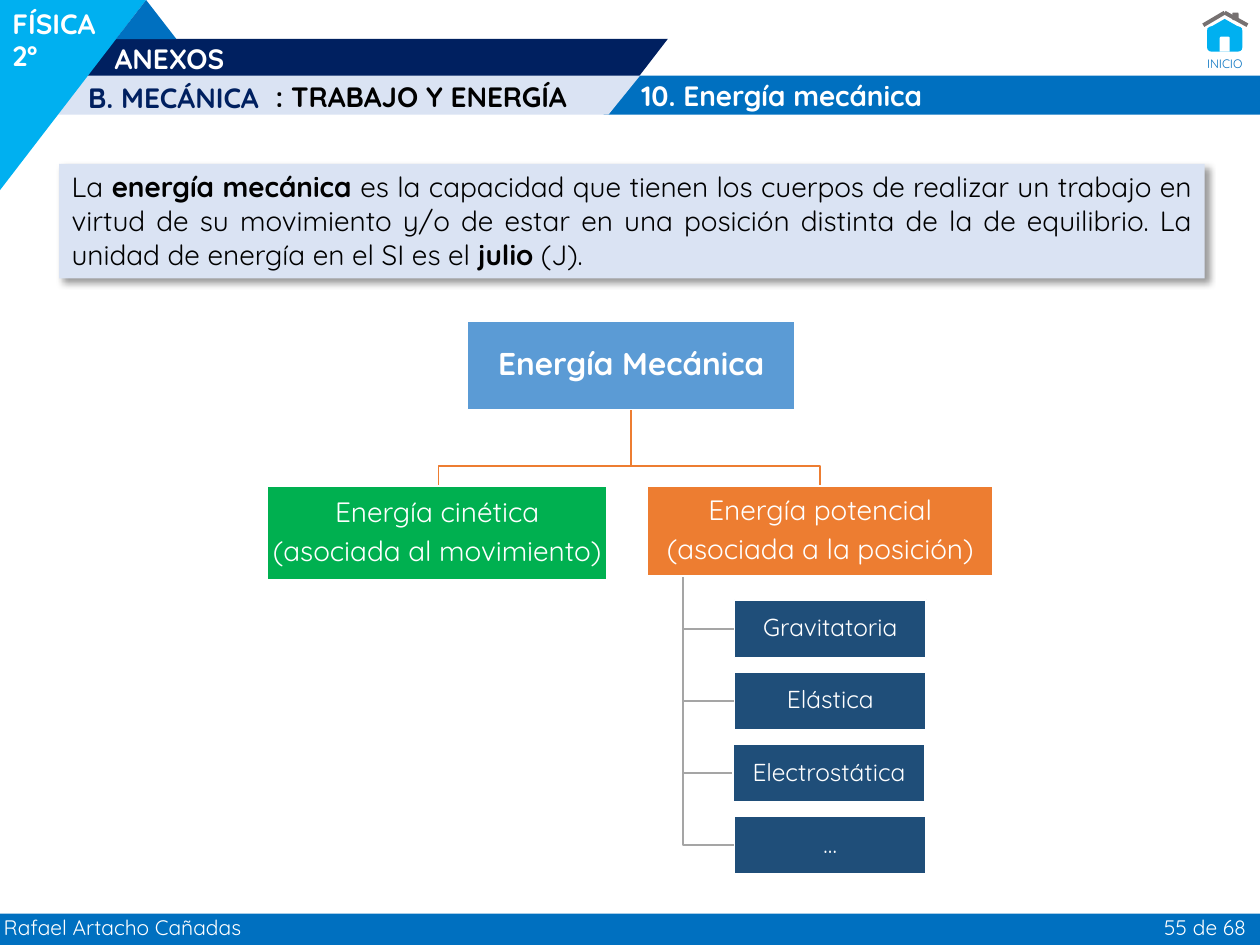
from lxml import etree
from pptx import Presentation
from pptx import util as u
from pptx.dml.color import RGBColor
from pptx.enum import shapes, text
from pptx.oxml.ns import qn

COLORS = {
    "white": "FFFFFF", "black": "000000", "blue": "0070C0", "navy": "002060",
    "pale": "DAE3F3", "cyan": "00B0F0", "gray": "767171", "rule": "A5A5A5",
    "root": "5B9BD5", "green": "00B050", "orange": "ED7D31", "leaf": "1F4E79",
}
COLUMNS, ROWS = 100, 75
KIND = shapes.MSO_SHAPE
ALIGN = text.PP_ALIGN
TIGHT = (0.1, 0.1, 0.1, 0.1)
NONE = (0, 0, 0, 0)
PADDED = (1, 0.5, 1, 0.5)


def color(name):
    return RGBColor.from_string(COLORS[name])


class SlideBuilder:
    """Places elements on a grid of COLUMNS by ROWS."""

    font = "Quicksand"

    def __init__(self, deck):
        self.page = deck.slides.add_slide(deck.slide_layouts[6])
        self.column = deck.slide_width / COLUMNS
        self.row = deck.slide_height / ROWS

    def x(self, columns):
        return u.Emu(round(columns * self.column))

    def y(self, rows):
        return u.Emu(round(rows * self.row))

    def area(self, left, top, width, height):
        return self.x(left), self.y(top), self.x(width), self.y(height)

    def shape(self, kind, area, fill, adjust=None, line=None):
        box = self.page.shapes.add_shape(kind, *self.area(*area))
        box.shadow.inherit = False
        box.fill.solid()
        box.fill.fore_color.rgb = color(fill)
        if line:
            box.line.color.rgb = color(line)
            box.line.width = u.Pt(1)
        else:
            box.line.fill.background()
        if adjust is not None:
            box.adjustments[0] = adjust
        return box

    def set_text(self, box, lines, size, ink="white", bold=False, align=ALIGN.LEFT,
                 insets=NONE, anchor=text.MSO_ANCHOR.TOP, wrap=True):
        frame = box.text_frame
        frame.text = "\n".join(lines)
        frame.word_wrap = wrap
        frame.vertical_anchor = anchor
        frame.margin_left, frame.margin_right = self.x(insets[0]), self.x(insets[2])
        frame.margin_top, frame.margin_bottom = self.y(insets[1]), self.y(insets[3])
        for para in frame.paragraphs:
            para.alignment = align
            for span in para.runs:
                self.style_span(span, size, ink, bold)
        return frame

    def style_span(self, span, size, ink, bold):
        span.font.name = self.font
        span.font.size = u.Pt(size)
        span.font.bold = bold
        span.font.color.rgb = color(ink)

    def label(self, area, words, size=16, **style):
        box = self.page.shapes.add_textbox(*self.area(*area))
        self.set_text(box, [words], size, **style)

    def node(self, area, lines, fill, size, bold=False):
        box = self.shape(KIND.RECTANGLE, area, fill, line="white")
        frame = self.set_text(box, lines, size, bold=bold, align=ALIGN.CENTER,
                              insets=TIGHT, anchor=text.MSO_ANCHOR.MIDDLE)
        for para in frame.paragraphs:
            para.line_spacing = 0.9
            para.space_after = u.Pt(5)

    def branch(self, points, ink):
        corners = [(self.x(left), self.y(top)) for left, top in points]
        builder = self.page.shapes.build_freeform(*corners[0])
        builder.add_line_segments(corners[1:], close=False)
        outline = builder.convert_to_shape()
        outline.shadow.inherit = False
        outline.fill.background()
        outline.line.color.rgb = color(ink)
        outline.line.width = u.Pt(1)

    def line(self, start, end, ink, width):
        rule = self.page.shapes.add_connector(
            shapes.MSO_CONNECTOR.STRAIGHT, self.x(start[0]), self.y(start[1]),
            self.x(end[0]), self.y(end[1]))
        rule.line.color.rgb = color(ink)
        rule.line.width = u.Pt(width)
        etree.SubElement(rule.element.spPr, qn("a:effectLst"))

    def drop_shadow(self, box):
        effects = box.element.spPr.find(qn("a:effectLst"))
        shadow = etree.SubElement(effects, qn("a:outerShdw"), blurRad="50800",
                                  dist="38100", dir="2700000", algn="tl", rotWithShape="0")
        ink = etree.SubElement(shadow, qn("a:srgbClr"), val=COLORS["black"])
        etree.SubElement(ink, qn("a:alpha"), val="40000")


def draw_header(slide):
    # Bands and corner
    slide.shape(KIND.RECTANGLE, (47.9, 6, 52.1, 3.1), "blue")
    slide.shape(KIND.PARALLELOGRAM, (6, 3.1, 47, 3), "navy", 0.77)
    slide.shape(KIND.PARALLELOGRAM, (3.6, 6, 47.2, 3.1), "pale", 0.81)
    corner = slide.shape(KIND.RIGHT_TRIANGLE, (0, 0, 11.6, 15.1), "cyan")
    corner.element.spPr.find(qn("a:xfrm")).set("flipV", "1")
    slide.shape(KIND.ISOSCELES_TRIANGLE, (9.2, 0, 4.8, 3.1), "blue")

    # Titles
    slide.label((0, 0, 9.5, 3.7), "FÍSICA", bold=True, insets=PADDED)
    slide.label((0, 2.6, 4.3, 3.7), "2º", bold=True, insets=PADDED)
    slide.label((7, 6.4, 46.4, 2.7), "B. MECÁNICA", ink="navy", bold=True)
    slide.label((9.1, 3.3, 46.4, 2.7), "ANEXOS", bold=True)
    slide.label((50.9, 6.2, 48.2, 2.7), "10. Energía mecánica", bold=True)
    slide.label((20.9, 5.8, 26, 3.7), ": TRABAJO Y ENERGÍA", ink="black",
                bold=True, insets=PADDED, wrap=False)


def draw_home_icon(slide):
    slide.shape(KIND.ROUNDED_RECTANGLE, (95.8, 2.1, 2.8, 2), "cyan")
    slide.shape(KIND.ISOSCELES_TRIANGLE, (95.8, 1.5, 2.8, 0.8), "cyan")
    slide.shape(KIND.ROUND_2_SAME_RECTANGLE, (96.8, 2.9, 0.8, 1.2), "white")
    for eave in (95.5, 99):
        slide.line((eave, 2), (97.2, 1), "gray", 2.25)
    slide.shape(KIND.ROUNDED_RECTANGLE, (97.8, 1, 0.5, 0.6), "gray")
    slide.label((95.8, 4.5, 2.9, 1.2), "INICIO", size=7, ink="blue", wrap=False)


def draw_footer(slide):
    slide.shape(KIND.RECTANGLE, (0, 72.5, 100, 2.5), "blue")
    slide.label((0.3, 72.6, 25.4, 2), "Rafael Artacho Cañadas", size=12)
    slide.label((88.8, 72.6, 10.1, 2), "55 de 68", size=12, align=ALIGN.RIGHT)


def draw_definition(slide):
    box = slide.shape(KIND.RECTANGLE, (4.7, 13, 90.9, 9.1), "pale")
    slide.drop_shadow(box)
    frame = slide.set_text(box, [""], 16, align=ALIGN.JUSTIFY, insets=PADDED)
    parts = [
        ("La ", False), ("energía mecánica ", True),
        ("es la capacidad que tienen los cuerpos de realizar un trabajo en virtud de su "
         "movimiento y/o de estar en una posición distinta de la de equilibrio. "
         "La unidad de energía en el SI es el ", False),
        ("julio", True), (" (J).", False),
    ]
    for words, bold in parts:
        span = frame.paragraphs[0].add_run()
        span.text = words
        slide.style_span(span, 16, "black", bold)


def draw_energy_tree(slide):
    leaves = [("Gravitatoria", 58.3), ("Elástica", 58.3),
              ("Electrostática", 58.2), ("…", 58.3)]
    first_top, pitch, leaf_height = 47.6, 5.73, 4.6
    root_x, trunk_x = 50.1, 54.2

    # Branches
    for index, (_, left) in enumerate(leaves):
        middle = first_top + index * pitch + leaf_height / 2
        slide.branch([(trunk_x, 45.7), (trunk_x, middle), (left, middle)], "rule")
    for child_x in (65.1, 34.8):
        slide.branch([(root_x, 32.5), (root_x, 37), (child_x, 37), (child_x, 38.6)], "orange")

    # Nodes
    slide.node((37.1, 25.5, 26, 7), ["Energía Mecánica"], "root", 18, bold=True)
    slide.node((21.2, 38.6, 27, 7.4),
               ["Energía cinética", "(asociada al movimiento)"], "green", 16)
    slide.node((51.4, 38.6, 27.4, 7.1),
               ["Energía potencial", "(asociada a la posición)"], "orange", 16)
    for index, (name, left) in enumerate(leaves):
        slide.node((left, first_top + index * pitch, 15.2, leaf_height), [name], "leaf", 14)


def main():
    deck = Presentation()
    deck.slide_width, deck.slide_height = u.Inches(10), u.Inches(7.5)
    slide = SlideBuilder(deck)
    draw_header(slide)
    draw_home_icon(slide)
    draw_footer(slide)
    draw_definition(slide)
    draw_energy_tree(slide)
    deck.save("out.pptx")


if __name__ == "__main__":
    main()
